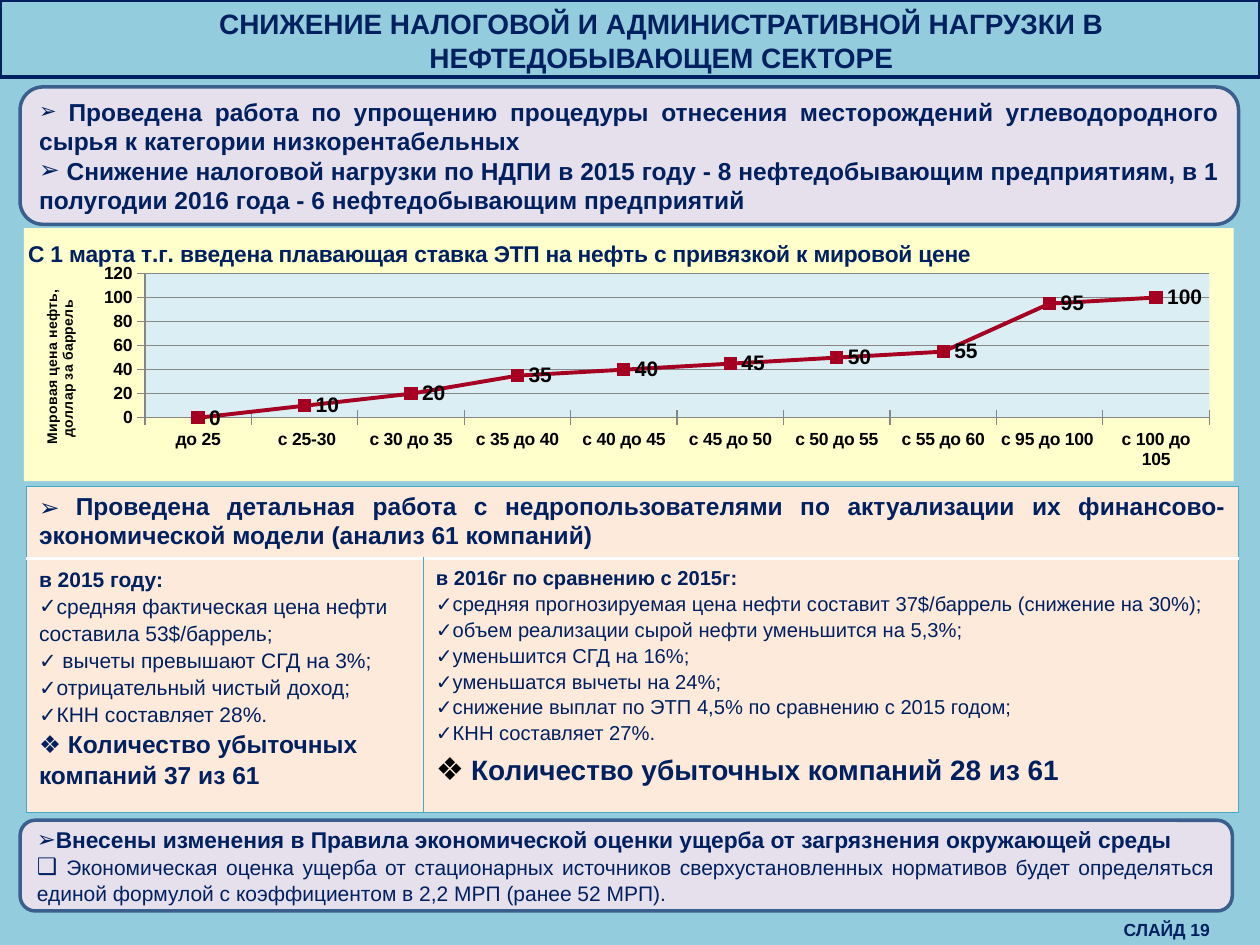
from dataclasses import dataclass
from typing import Any, Optional

from lxml import etree
from pptx import Presentation
from pptx.chart.data import CategoryChartData
from pptx.dml.color import RGBColor
from pptx.enum.chart import XL_CHART_TYPE, XL_LABEL_POSITION, XL_MARKER_STYLE, XL_TICK_MARK
from pptx.enum.shapes import MSO_SHAPE
from pptx.enum.text import MSO_ANCHOR, PP_ALIGN
from pptx.oxml.ns import qn
from pptx.util import Pt

PX = 9144  # EMU per px, 100 px to the inch
LEFT, CENTER, RIGHT, JUSTIFY = PP_ALIGN.LEFT, PP_ALIGN.CENTER, PP_ALIGN.RIGHT, PP_ALIGN.JUSTIFY
MIDDLE = MSO_ANCHOR.MIDDLE
RECT, ROUNDED = MSO_SHAPE.RECTANGLE, MSO_SHAPE.ROUNDED_RECTANGLE
LINE_MARKERS = XL_CHART_TYPE.LINE_MARKERS
SQUARE = XL_MARKER_STYLE.SQUARE
LABEL_RIGHT = XL_LABEL_POSITION.RIGHT
CROSS = XL_TICK_MARK.CROSS
ARROW, CHECK, DIAMOND, BOX = "➢", "✓", "❖", "❑"


@dataclass(frozen=True)
class Theme:
    background: str = "93CDDD"
    ink: str = "002060"
    black: str = "000000"
    white: str = "FFFFFF"
    panel: str = "E6E0EC"
    panel_edge: str = "3A5F8C"
    cell: str = "FDEADA"
    cell_edge: str = "46AAC5"
    chart: str = "FFFFCC"
    plot: str = "DBEEF4"
    grid: str = "868686"
    series: str = "A50021"
    font: str = "Arial"
    symbol_font: str = "Calibri"
    tiny: float = 8
    small: float = 10
    compact: float = 11.5
    body: float = 12
    subhead: float = 13
    lead: float = 14
    title: float = 16
    large: float = 18


THEME = Theme()


@dataclass(frozen=True)
class Run:
    text: str
    size: float = THEME.body
    bold: bool = True
    color: str = THEME.ink
    font: str = THEME.font


@dataclass(frozen=True)
class Para:
    runs: tuple[Run, ...]
    bullet: str = ""
    align: Any = LEFT
    spacing: Optional[float] = None
    indent: int = 0


@dataclass(frozen=True)
class Block:
    """An area of the slide: place in px, text, and outline when it has a preset."""
    left: int
    top: int
    width: int
    height: int
    paras: tuple[Para, ...] = ()
    preset: Any = None
    fill: str = ""
    edge: str = ""


def rgb(color: str) -> RGBColor:
    return RGBColor.from_string(color)


def assign(target: Any, values: dict[str, Any]) -> None:
    for name, value in values.items():
        setattr(target, name, value)


def paint(fill: Any, color: str) -> None:
    fill.solid()
    fill.fore_color.rgb = rgb(color)


def style_font(font: Any, size: float, bold: bool = True,
               color: str = THEME.black, name: str = THEME.font) -> None:
    assign(font, {"size": Pt(size), "bold": bold, "name": name})
    paint(font.fill, color)


def write(frame: Any, paras: tuple[Para, ...]) -> None:
    frame.word_wrap = True
    for index, para in enumerate(paras):
        line = frame.paragraphs[0] if index == 0 else frame.add_paragraph()
        assign(line, {"alignment": para.align, "line_spacing": para.spacing})
        props = line._p.get_or_add_pPr()
        props.set("marL", str(para.indent * PX))
        props.set("indent", "0")
        if para.bullet:
            etree.SubElement(props, qn("a:buFont")).set("typeface", THEME.font)
            etree.SubElement(props, qn("a:buChar")).set("char", para.bullet)
        for part in para.runs:
            run = line.add_run()
            run.text = part.text
            style_font(run.font, part.size, part.bold, part.color, part.font)


def draw_block(slide: Any, block: Block) -> None:
    place = [v * PX for v in (block.left, block.top, block.width, block.height)]
    if block.preset is None:
        shape = slide.shapes.add_textbox(*place)
    else:
        shape = slide.shapes.add_shape(block.preset, *place)
        shape.shadow.inherit = False
        if block.fill:
            paint(shape.fill, block.fill)
        else:
            shape.fill.background()
        paint(shape.line.fill, block.edge)
        shape.line.width = Pt(2)
    shape.text_frame.vertical_anchor = MIDDLE
    if block.paras:
        write(shape.text_frame, block.paras)


def set_layout(parent: Any, **fractions: float) -> None:
    """Place a chart part by fractions of the chart area."""
    for old in parent.findall(qn("c:layout")):
        parent.remove(old)
    layout = etree.Element(qn("c:layout"))
    manual = etree.SubElement(layout, qn("c:manualLayout"))
    if "w" in fractions:
        etree.SubElement(manual, qn("c:layoutTarget")).set("val", "inner")
    for mode in ("xMode", "yMode"):
        etree.SubElement(manual, qn(f"c:{mode}")).set("val", "edge")
    for key, value in fractions.items():
        etree.SubElement(manual, qn(f"c:{key}")).set("val", str(value))
    text = parent.find(qn("c:tx"))
    parent.insert(0 if text is None else 1, layout)


def fill_part(parent: Any, color: str, before: tuple[str, ...]) -> None:
    """Give a chart area or plot area a plain fill without an outline."""
    props = etree.Element(qn("c:spPr"))
    solid = etree.SubElement(props, qn("a:solidFill"))
    etree.SubElement(solid, qn("a:srgbClr")).set("val", color)
    etree.SubElement(etree.SubElement(props, qn("a:ln")), qn("a:noFill"))
    following = [child for child in parent if child.tag in [qn(tag) for tag in before]]
    if following:
        following[0].addprevious(props)
    else:
        parent.append(props)


def set_title(owner: Any, text: str, size: float, color: str) -> None:
    frame = owner.text_frame
    frame.text = text
    style_font(frame.paragraphs[0].runs[0].font, size, color=color)


def draw_price_chart(slide: Any) -> None:
    data = CategoryChartData()
    data.categories = ["до 25", " с 25-30", "с 30 до 35", "с 35 до 40", "с 40 до 45", "с 45 до 50",
                       "с 50 до 55", "с 55 до 60", "с 95 до 100 ", "с 100 до 105"]
    data.add_series("Series 1", (0, 10, 20, 35, 40, 45, 50, 55, 95, 100))
    place = [v * PX for v in (19, 181, 960, 201)]
    chart = slide.shapes.add_chart(LINE_MARKERS, *place, data).chart
    style_font(chart.font, THEME.large, False, name=THEME.symbol_font)
    chart.has_legend = False
    set_title(chart.chart_title, "С 1 марта т.г. введена плавающая ставка ЭТП на нефть "
              "с привязкой к мировой цене", THEME.subhead, THEME.ink)
    chart.chart_title.include_in_layout = False
    set_layout(chart.chart_title._element, x=0, y=0.03)

    values = chart.value_axis
    assign(values, {"minimum_scale": 0, "maximum_scale": 120, "major_unit": 20,
                    "has_major_gridlines": True})
    paint(values.major_gridlines.format.line.fill, THEME.grid)
    set_title(values.axis_title, "Мировая цена нефть, доллар за баррель ", THEME.tiny, THEME.black)
    for axis in (chart.category_axis, values):
        axis.major_tick_mark = CROSS
        style_font(axis.tick_labels.font, THEME.small)
        paint(axis.format.line.fill, THEME.grid)

    plot = chart.plots[0]
    plot.vary_by_categories = False
    rate = plot.series[0]
    rate.smooth = False
    paint(rate.format.line.fill, THEME.series)
    rate.format.line.width = Pt(2.25)
    assign(rate.marker, {"style": SQUARE, "size": 7})
    paint(rate.marker.format.fill, THEME.series)
    paint(rate.marker.format.line.fill, THEME.series)
    labels = rate.data_labels
    assign(labels, {"show_value": True, "position": LABEL_RIGHT})
    style_font(labels.font, THEME.body)

    space = chart._chartSpace
    area = space.find(qn("c:chart")).find(qn("c:plotArea"))
    set_layout(area, x=0.1, y=0.18, w=0.88, h=0.57)
    fill_part(area, THEME.plot, ("c:extLst",))
    fill_part(space, THEME.chart, ("c:txPr", "c:externalData"))


def set_border(cell: Any, side: str, color: str, width: float) -> None:
    line = etree.Element(qn(f"a:ln{side}"), w=str(Pt(width)))
    solid = etree.SubElement(line, qn("a:solidFill"))
    etree.SubElement(solid, qn("a:srgbClr")).set("val", color)
    props = cell._tc.get_or_add_tcPr()
    props.insert(len([c for c in props if c.tag.startswith(qn("a:ln"))]), line)


def draw_model_table(slide: Any, contents: dict[tuple[int, int], tuple[Para, ...]]) -> None:
    table = slide.shapes.add_table(2, 2, *[v * PX for v in (21, 386, 962, 258)]).table
    assign(table, {"first_row": False, "horz_banding": False})
    for column, width in zip(table.columns, (315, 647)):
        column.width = width * PX
    for row, height in zip(table.rows, (57, 201)):
        row.height = height * PX
    table.cell(0, 0).merge(table.cell(0, 1))
    for row in range(2):
        for column in range(2):
            cell = table.cell(row, column)
            paint(cell.fill, THEME.cell)
            for side in "LRTB":
                between_rows = side == "TB"[1 - row]
                set_border(cell, side, *((THEME.white, 2) if between_rows else (THEME.cell_edge, 0.75)))
            if (row, column) in contents:
                write(cell.text_frame, contents[row, column])


def year_column(heading: str, size: float, facts: tuple[str, ...], losses: tuple[Run, ...]) -> tuple[Para, ...]:
    """Paragraphs for one year: heading, checked facts, count of loss-making companies."""
    checked = [Para((Run(fact, size, False),), CHECK, spacing=1.15) for fact in facts]
    return (Para((Run(heading, size),), spacing=1.15), *checked, Para(losses, DIAMOND, spacing=1.15))


SLIDE_NUMBER = Block(801, 725, 169, 25, (Para((Run("СЛАЙД 19", THEME.small),), align=RIGHT),))
HEADING = Block(0, 0, 1000, 64, (Para((Run(
    "СНИЖЕНИЕ НАЛОГОВОЙ И АДМИНИСТРАТИВНОЙ НАГРУЗКИ В НЕФТЕДОБЫВАЮЩЕМ СЕКТОРЕ", THEME.title),),
    align=CENTER, indent=50),))
HEADING_FRAME = Block(0, 0, 1000, 61, preset=RECT, edge=THEME.ink)
TAX_RELIEF = Block(16, 69, 967, 109, (
    Para((Run(" "), Run("Проведена работа по упрощению процедуры отнесения месторождений углеводородного "
                        "сырья к категории низкорентабельных", THEME.lead)), ARROW, JUSTIFY),
    Para((Run(" Снижение налоговой нагрузки по НДПИ в 2015 году - 8 нефтедобывающим предприятиям, "
              "в 1 полугодии 2016 года - 6 нефтедобывающим предприятий", THEME.lead),), ARROW, JUSTIFY),
), ROUNDED, THEME.panel, THEME.panel_edge)
DAMAGE_RULES = Block(16, 651, 962, 72, (
    Para((Run("Внесены изменения в Правила экономической оценки ущерба от загрязнения окружающей среды",
              THEME.subhead),), ARROW, JUSTIFY),
    Para((Run(" ", THEME.subhead), Run(
        "Экономическая оценка ущерба от стационарных источников сверхустановленных нормативов будет "
        "определяться единой формулой с коэффициентом в 2,2 МРП (ранее 52 МРП).", bold=False)), BOX, JUSTIFY),
), ROUNDED, THEME.panel, THEME.panel_edge)
MODEL_REVIEW = {
    (0, 0): (Para((Run(" ", THEME.lead, font=THEME.symbol_font), Run(
        "Проведена детальная работа с недропользователями по актуализации их "
        "финансово-экономической модели (анализ 61 компаний)", THEME.lead)), ARROW, JUSTIFY),),
    (1, 0): year_column("в 2015 году:", THEME.body, (
        "средняя фактическая цена нефти составила 53$/баррель;", " вычеты превышают СГД на 3%;",
        "отрицательный чистый доход;", "КНН составляет 28%."),
        (Run(" Количество убыточных компаний 37 из 61", THEME.lead),)),
    (1, 1): year_column("в 2016г по сравнению с 2015г:", THEME.compact, (
        "средняя прогнозируемая цена нефти составит 37$/баррель (снижение на 30%);",
        "объем реализации сырой нефти уменьшится на 5,3%;", "уменьшится СГД на 16%;",
        "уменьшатся вычеты на 24%;", "снижение выплат по ЭТП 4,5% по сравнению с 2015 годом;",
        "КНН составляет 27%."),
        (Run(" ", THEME.large, False, THEME.black, THEME.symbol_font),
         Run("Количество убыточных компаний 28 из 61", THEME.title))),
}


def main() -> None:
    deck = Presentation()
    assign(deck, {"slide_width": 1000 * PX, "slide_height": 750 * PX})
    slide = deck.slides.add_slide(deck.slide_layouts[6])
    paint(slide.background.fill, THEME.background)
    for block in (SLIDE_NUMBER, HEADING, HEADING_FRAME):
        draw_block(slide, block)
    draw_price_chart(slide)
    for block in (TAX_RELIEF, DAMAGE_RULES):
        draw_block(slide, block)
    draw_model_table(slide, MODEL_REVIEW)
    deck.save("out.pptx")


if __name__ == "__main__":
    main()
